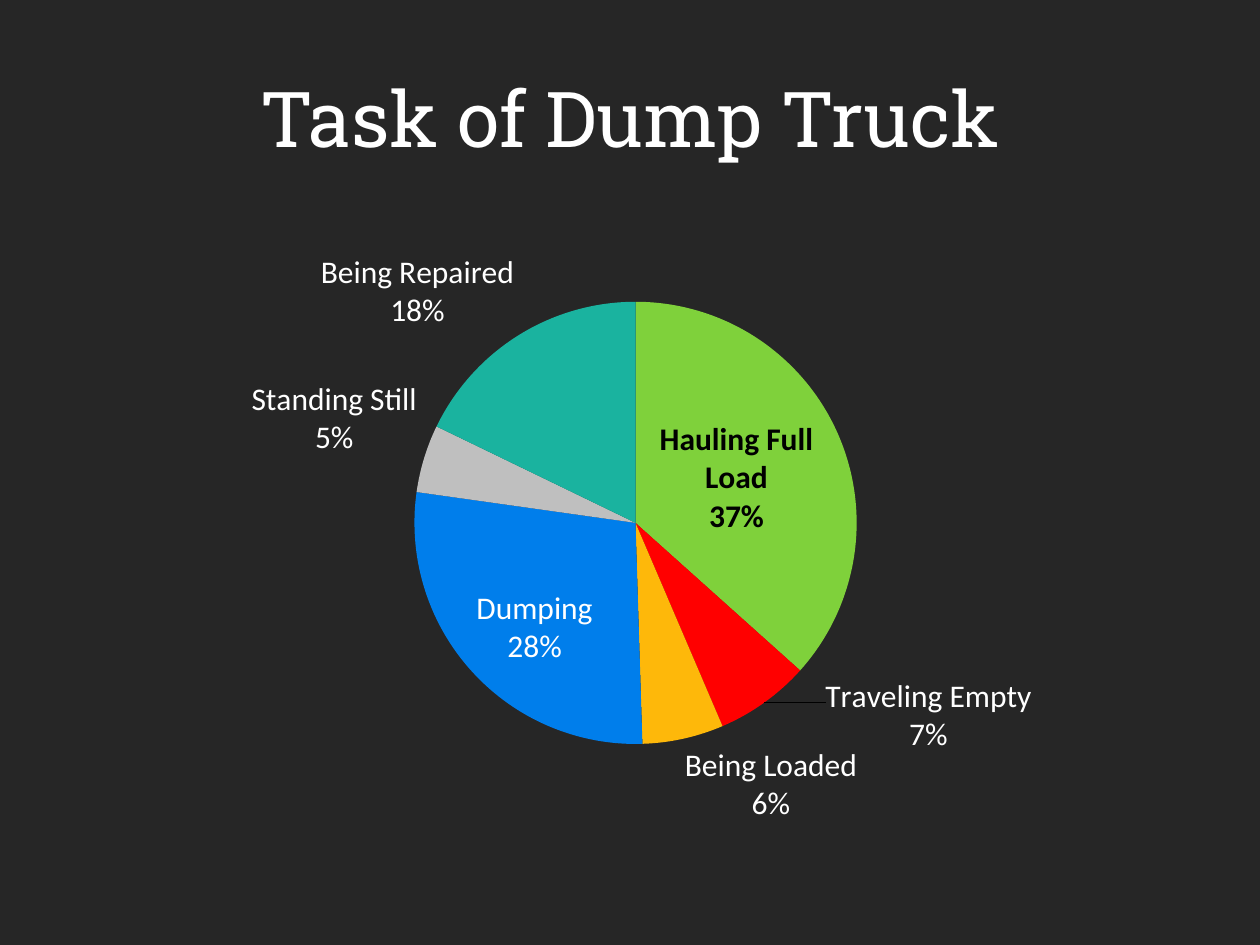
from lxml import etree
from pptx import Presentation
from pptx.chart.data import CategoryChartData
from pptx.dml.color import RGBColor
from pptx.enum import chart as ch, text
from pptx.oxml import parse_xml
from pptx.oxml.ns import nsdecls, qn
from pptx.util import Inches, Pt

WHITE = "FFFFFF"
POS = ch.XL_LABEL_POSITION
TASKS = [
    ("Hauling Full Load", 37, "7FD13B", POS.CENTER),
    ("Traveling Empty", 7, "FF0000", POS.OUTSIDE_END),
    ("Being Loaded", 6, "FEB80A", POS.OUTSIDE_END),
    ("Dumping", 28, "007EEB", POS.INSIDE_END),
    ("Standing Still", 5, "BFBFBF", POS.OUTSIDE_END),
    ("Being Repaired", 18, "1AB39F", POS.OUTSIDE_END),
]


def rgb(value):
    return RGBColor.from_string(value)


def style_font(font, size, color, name, bold=False):
    font.size, font.name, font.bold = Pt(size), name, bold
    font.color.rgb = rgb(color)


def manual_layout(**values):
    layout = parse_xml(f"<c:layout {nsdecls('c')}><c:manualLayout/></c:layout>")
    for tag, value in values.items():
        etree.SubElement(layout[0], qn(f"c:{tag}")).set("val", str(value))
    return layout


def set_title(s, title):
    sp = s.shapes.title
    sp.left, sp.top, sp.width, sp.height = map(Inches, (0.5, 0.3, 9, 1.25))
    tf = sp.text_frame
    tf.text = title
    tf.vertical_anchor = text.MSO_ANCHOR.MIDDLE
    p = tf.paragraphs[0]
    p.alignment = text.PP_ALIGN.CENTER
    style_font(p.runs[0].font, 44, WHITE, "Roboto Slab")


def show_category_and_percent(label):
    for tag in ("showVal", "showCatName", "showPercent"):
        label.find(qn(f"c:{tag}")).set("val", "0" if tag == "showVal" else "1")
    for old in label.findall(qn("c:separator")):
        label.remove(old)
    separator = parse_xml(f"<c:separator {nsdecls('c')}>\n</c:separator>")
    label.find(qn("c:showBubbleSize")).addnext(separator)


def format_point(series, index, color, position):
    point = series.points[index]
    point.format.fill.solid()
    point.format.fill.fore_color.rgb = rgb(color)
    label = point.data_label
    label.position = position
    if index:
        style_font(label.font, 18, WHITE, "Calibri")
    else:
        tf = label.text_frame
        tf.text = "Hauling Full Load\n37%"
        for p in tf.paragraphs:
            style_font(p.runs[0].font, 18, "000000", "Calibri", True)
    element = series.data_labels._element.findall(qn("c:dLbl"))[index]
    show_category_and_percent(element)
    return element.find(qn("c:idx"))


def add_task_pie(s):
    data = CategoryChartData()
    data.categories = [task[0] for task in TASKS]
    data.add_series("Series 1", [task[1] for task in TASKS])
    chart = s.shapes.add_chart(
        ch.XL_CHART_TYPE.PIE, Inches(0.5), Inches(1.75), Inches(9), Inches(4.95), data
    ).chart
    chart.has_legend = chart.has_title = False
    style_font(chart.font, 18, WHITE, "Calibri")
    plot = chart.plots[0]
    plot.vary_by_categories = True
    series = plot.series[0]
    labels = series.data_labels
    style_font(labels.font, 18, WHITE, "Calibri")
    labels.show_category_name = labels.show_percentage = True
    labels.show_value = False
    anchors = [
        format_point(series, i, color, position)
        for i, (_, _, color, position) in enumerate(TASKS)
    ]
    show_category_and_percent(labels._element)
    anchors[1].addnext(manual_layout(x=0.05, y=-0.05))
    anchors[5].addnext(parse_xml(
        f"<c:spPr {nsdecls('c', 'a')}><a:solidFill>"
        '<a:srgbClr val="3F6C19"/></a:solidFill></c:spPr>'
    ))
    area = chart._chartSpace.find(f".//{qn('c:plotArea')}")
    for old in area.findall(qn("c:layout")):
        area.remove(old)
    area.insert(0, manual_layout(
        layoutTarget="inner", xMode="edge", yMode="edge", x=0.31, y=0.13, w=0.39, h=0.71
    ))


def main():
    prs = Presentation()
    prs.slide_width, prs.slide_height = Inches(10), Inches(7.5)
    s = prs.slides.add_slide(prs.slide_layouts[5])
    s.background.fill.solid()
    s.background.fill.fore_color.rgb = rgb("262626")
    set_title(s, "Task of Dump Truck")
    add_task_pie(s)
    prs.save("out.pptx")


if __name__ == "__main__":
    main()
